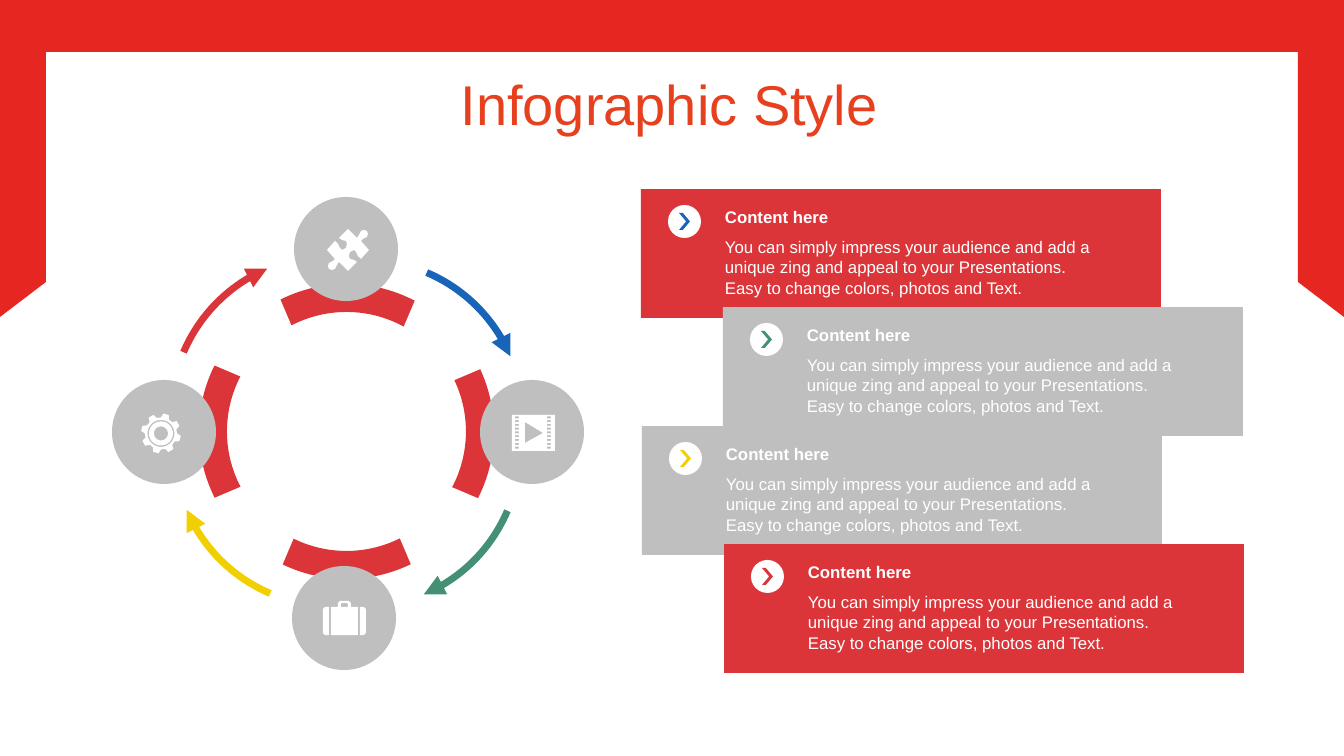
from dataclasses import dataclass
from math import cos, radians, sin

from lxml.etree import SubElement
from pptx import Presentation
from pptx.dml.color import RGBColor
from pptx.enum.shapes import MSO_SHAPE
from pptx.enum.text import MSO_ANCHOR, PP_ALIGN
from pptx.oxml.ns import qn
from pptx.shapes.autoshape import Shape
from pptx.shapes.shapetree import SlideShapes
from pptx.util import Emu, Pt

EMU_PER_PX = 914400 / 100.8
SLIDE_WIDTH, SLIDE_HEIGHT = 1344, 756

FRAME_RED = RGBColor(0xE5, 0x26, 0x21)
TITLE_RED = RGBColor(0xE7, 0x40, 0x1E)
RED = RGBColor(0xDC, 0x35, 0x39)
GRAY = RGBColor(0xBF, 0xBF, 0xBF)
BLUE = RGBColor(0x17, 0x64, 0xB9)
GREEN = RGBColor(0x44, 0x90, 0x74)
YELLOW = RGBColor(0xF1, 0xCF, 0x01)
WHITE = RGBColor(0xFF, 0xFF, 0xFF)

HEADING = "Content here"
BODY = (
    "You can simply impress your audience and add a unique zing and appeal "
    "to your Presentations. Easy to change colors, photos and Text."
)

Point = tuple[float, float]
Contour = list[Point]


@dataclass(frozen=True)
class Card:
    left: int
    top: int
    fill: RGBColor
    accent: RGBColor


@dataclass(frozen=True)
class CycleArrow:
    center_x: int
    center_y: int
    start_angle: int
    color: RGBColor


CARDS = [
    Card(641, 189, RED, BLUE),
    Card(723, 307, GRAY, GREEN),
    Card(642, 426, GRAY, YELLOW),
    Card(724, 544, RED, RED),
]
CYCLE_ARROWS = [
    CycleArrow(329, 414, 203, RED),
    CycleArrow(362, 449, 23, GREEN),
    CycleArrow(365, 418, 293, BLUE),
    CycleArrow(332, 448, 113, YELLOW),
]
ARROW_RADIUS, ARROW_SWEEP = 158, 44
DISC_SIZE = 104
DISC_CORNERS = [(294, 197), (292, 566), (480, 380), (112, 380)]


def px(length: float) -> Emu:
    return Emu(round(length * EMU_PER_PX))


def paint(shape: Shape, fill: RGBColor) -> None:
    shape.shadow.inherit = False
    shape.fill.solid()
    shape.fill.fore_color.rgb = fill
    shape.line.fill.background()


def add_preset(shapes: SlideShapes, kind: MSO_SHAPE, left: int, top: int,
               width: int, height: int, fill: RGBColor) -> Shape:
    shape = shapes.add_shape(kind, px(left), px(top), px(width), px(height))
    paint(shape, fill)
    return shape


def add_outline(shapes: SlideShapes, contours: list[Contour], fill: RGBColor) -> None:
    """Draw closed contours as one shape; nested contours become holes."""
    scaled = [[(px(x), px(y)) for x, y in contour] for contour in contours]
    builder = shapes.build_freeform(*scaled[0][0], scale=1.0)
    for index, contour in enumerate(scaled):
        if index:
            builder.move_to(*contour[0])
        builder.add_line_segments(contour[1:], close=True)
    paint(builder.convert_to_shape(), fill)


def add_text(shapes: SlideShapes, text: str, left: int, top: int, width: int,
             height: int, size: int, color: RGBColor, bold: bool = False,
             anchor: MSO_ANCHOR = MSO_ANCHOR.MIDDLE) -> Shape:
    box = shapes.add_textbox(px(left), px(top), px(width), px(height))
    frame = box.text_frame
    frame.word_wrap = True
    frame.vertical_anchor = anchor
    frame.text = text
    font = frame.paragraphs[0].runs[0].font
    font.name, font.size, font.bold = "Arial", Pt(size), bold
    font.color.rgb = color
    return box


def add_frame(shapes: SlideShapes) -> None:
    left_side = [(46, 282), (0, 317), (0, 0), (659, 0), (659, 52), (46, 52)]
    right_side = [(SLIDE_WIDTH - x, y) for x, y in left_side]
    for side in (right_side, left_side):
        add_outline(shapes, [side], FRAME_RED)
    add_preset(shapes, MSO_SHAPE.RECTANGLE, 463, 0, 394, 52, FRAME_RED)


def add_title(shapes: SlideShapes) -> None:
    title = add_text(shapes, "Infographic Style", 88, 67, 1162, 80, 40, TITLE_RED)
    paragraph = title.text_frame.paragraphs[0]
    paragraph.alignment = PP_ALIGN.CENTER
    paragraph.line_spacing = 0.9
    paragraph.space_before = Pt(10)


def add_card(shapes: SlideShapes, card: Card) -> None:
    left, top = card.left, card.top
    add_preset(shapes, MSO_SHAPE.RECTANGLE, left, top, 520, 129, card.fill)
    add_preset(shapes, MSO_SHAPE.OVAL, left + 27, top + 16, 33, 33, WHITE)
    chevron = add_preset(shapes, MSO_SHAPE.CHEVRON, left + 38, top + 24, 11, 17, card.accent)
    chevron.adjustments[0] = 0.65
    add_text(shapes, HEADING, left + 74, top + 13, 395, 30, 12, WHITE, bold=True)
    add_text(shapes, BODY, left + 74, top + 43, 395, 72, 12, WHITE, anchor=MSO_ANCHOR.TOP)


def add_cycle_arrow(shapes: SlideShapes, arrow: CycleArrow) -> None:
    """Draw an arc whose white wedge also hides part of the ring."""
    arc = add_preset(shapes, MSO_SHAPE.ARC, arrow.center_x - ARROW_RADIUS,
                     arrow.center_y - ARROW_RADIUS, 2 * ARROW_RADIUS, 2 * ARROW_RADIUS, WHITE)
    # Adjustments count 100000ths, while angles are stored in 60000ths of a degree.
    arc.adjustments[0] = arrow.start_angle * 0.6
    arc.adjustments[1] = (arrow.start_angle + ARROW_SWEEP) * 0.6
    arc.line.color.rgb = arrow.color
    arc.line.width = Pt(5)
    SubElement(arc.element.spPr.get_or_add_ln(), qn("a:tailEnd"), type="triangle")


def rectangle(left: float, top: float, right: float, bottom: float) -> Contour:
    return [(left, top), (right, top), (right, bottom), (left, bottom)]


def polar(center: Point, radius: float, angle: float) -> Point:
    return (center[0] + radius * cos(radians(angle)), center[1] + radius * sin(radians(angle)))


def puzzle() -> list[Contour]:
    half = [(19, -19), (20, -16), (19, -13), (15, -11), (13, -9), (21, 0), (13, 9),
            (10, 6), (8, 2), (6, 0), (2, 2), (1, 6), (2, 9), (6, 10), (9, 12),
            (0, 21), (-9, 12), (-11, 15), (-13, 19), (-16, 20)]
    offsets = half + [(-x, -y) for x, y in half]
    return [[(348 + x, 250 + y) for x, y in offsets]]


def film() -> list[Contour]:
    sprockets = [rectangle(left, 416.4 + 3.77 * row, left + 4, 418.4 + 3.77 * row)
                 for left in (515, 547) for row in range(9)]
    play = [(525, 422), (525, 443), (543, 433)]
    return [rectangle(512, 415, 555, 451), play, *sprockets]


def suitcase() -> list[Contour]:
    left_end = [(329, 607), (325, 607), (323, 609), (323, 633), (325, 635), (329, 635)]
    right_end = [(689 - x, y) for x, y in left_end]
    middle = [(331, 607), (338, 607), (338, 603), (340, 601), (349, 601), (351, 603),
              (351, 607), (358, 607), (358, 635), (331, 635)]
    handle_gap = [(341, 607), (341, 604), (342, 603), (347, 603), (348, 604), (348, 607)]
    return [middle, handle_gap, left_end, right_end]


def gear() -> list[Contour]:
    center = (161, 433.5)
    teeth = [polar(center, radius, -75 + 45 * tooth + offset) for tooth in range(8)
             for radius, offset in ((16, -15), (20, -8), (20, 8), (16, 15))]
    rings = [[polar(center, radius, angle) for angle in range(0, 360, 10)]
             for radius in (13.5, 12, 7)]
    return [teeth, *rings]


def main() -> None:
    presentation = Presentation()
    presentation.slide_width, presentation.slide_height = px(SLIDE_WIDTH), px(SLIDE_HEIGHT)
    shapes = presentation.slides.add_slide(presentation.slide_layouts[6]).shapes

    add_frame(shapes)
    add_title(shapes)
    for card in CARDS:
        add_card(shapes, card)

    ring = add_preset(shapes, MSO_SHAPE.OVAL, 213, 298, 267, 267, WHITE)
    ring.line.color.rgb = RED
    ring.line.width = Pt(20)
    for arrow in CYCLE_ARROWS:
        add_cycle_arrow(shapes, arrow)
    for left, top in DISC_CORNERS:
        add_preset(shapes, MSO_SHAPE.OVAL, left, top, DISC_SIZE, DISC_SIZE, GRAY)
    for icon in (puzzle(), film(), suitcase(), gear()):
        add_outline(shapes, icon, WHITE)

    presentation.save("out.pptx")


if __name__ == "__main__":
    main()
